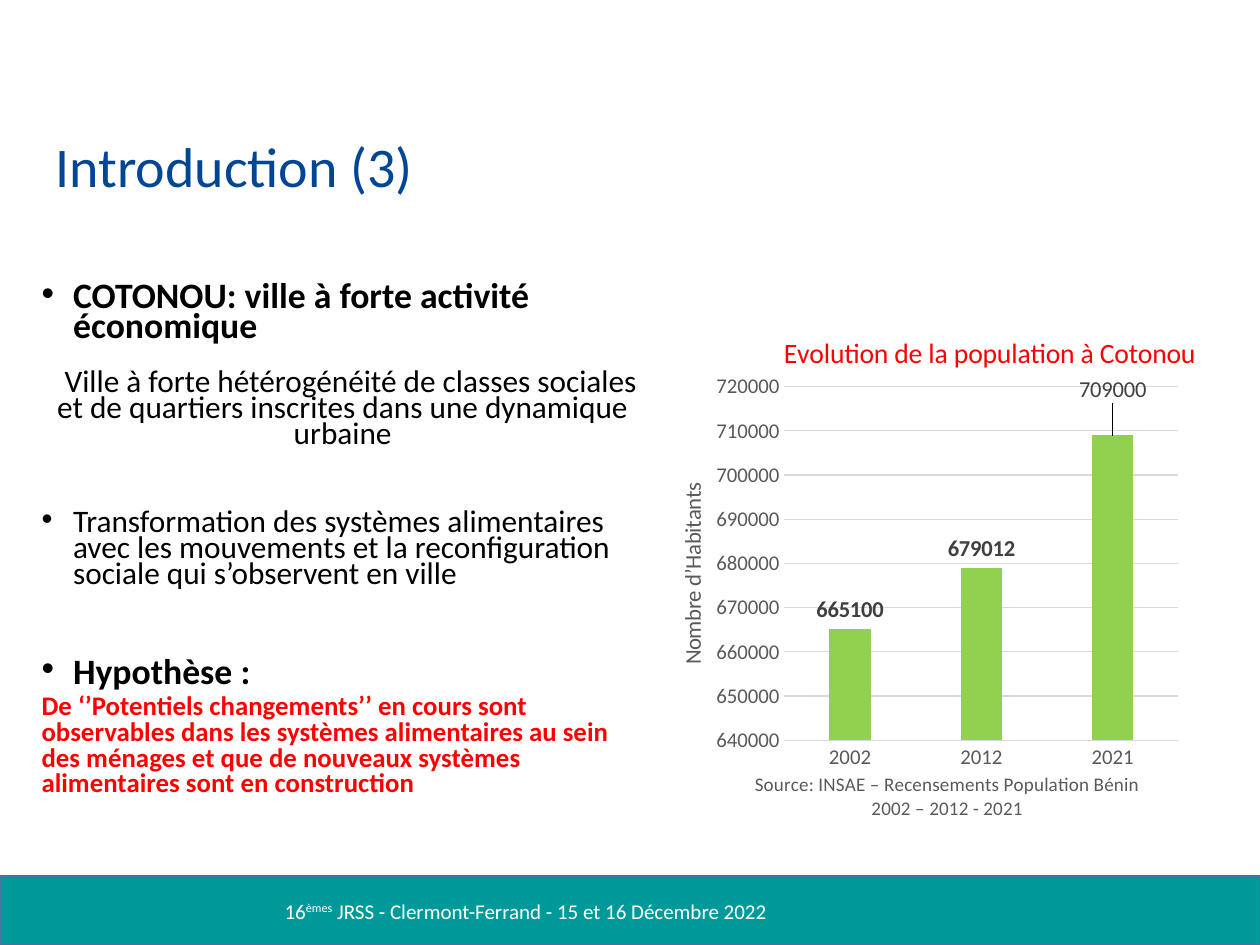
from lxml.etree import SubElement, fromstring
from pptx import Presentation
from pptx.chart.data import CategoryChartData
from pptx.dml.color import RGBColor
from pptx.enum.chart import XL_CHART_TYPE, XL_LABEL_POSITION, XL_TICK_MARK
from pptx.enum.shapes import MSO_SHAPE
from pptx.enum.text import MSO_ANCHOR, MSO_AUTO_SIZE, PP_ALIGN
from pptx.oxml.ns import nsdecls, qn
from pptx.util import Inches, Pt

BLACK, WHITE, RED = "000000", "FFFFFF", "FF0000"
BLUE, TEAL, GREEN = "014694", "00999A", "92D050"
GREY, DARK_GREY, PALE_GREY = "595959", "404040", "D9D9D9"


def colour(code):
    return RGBColor.from_string(code)


def apply(target, values):
    for name, value in values.items():
        setattr(target, name, value)


def set_layout(parent, index, **shares):
    """Place a chart part by shares of the chart's size."""
    old = parent.find(qn("c:layout"))
    if old is not None:
        parent.remove(old)
    layout = fromstring(f"<c:layout {nsdecls('c')}><c:manualLayout/></c:layout>")
    for name, value in shares.items():
        SubElement(layout[0], qn(f"c:{name}")).set("val", str(value))
    parent.insert(index, layout)


class Slide:
    font_name = "Calibri"
    columns, rows = 100, 75

    def __init__(self, deck, layout):
        self.deck = deck
        self.page = deck.slides.add_slide(deck.slide_layouts[layout])

    def place(self, left, top, width, height):
        column = self.deck.slide_width / self.columns
        row = self.deck.slide_height / self.rows
        return [round(value * step) for value, step in
                zip((left, top, width, height), (column, row, column, row))]

    def style(self, font, size, code, bold=False):
        apply(font, dict(name=self.font_name, size=Pt(size), bold=bold))
        font.color.rgb = colour(code)

    def add_span(self, para, text, size, code, bold=False, baseline=0):
        span = para.add_run()
        span.text = text
        self.style(span.font, size, code, bold)
        if baseline:
            span.font._element.set("baseline", str(baseline * 1000))

    def indent(self, para, left=0, first=0, bullet=None):
        props = para._p.get_or_add_pPr()
        props.set("marL", str(Inches(left)))
        props.set("indent", str(Inches(first)))
        if bullet:
            SubElement(props, qn("a:buFont")).set("typeface", "Arial")
            SubElement(props, qn("a:buChar")).set("char", bullet)
        else:
            SubElement(props, qn("a:buNone"))

    def placeholder(self, shape, area, anchor):
        apply(shape, dict(zip(("left", "top", "width", "height"), self.place(*area))))
        apply(shape.text_frame, dict(word_wrap=True, auto_size=MSO_AUTO_SIZE.NONE,
                                     vertical_anchor=anchor))
        return shape.text_frame

    def title(self, text, area):
        shape = self.page.shapes.title
        shape.fill.solid()
        shape.fill.fore_color.rgb = colour(WHITE)
        para = self.placeholder(shape, area, MSO_ANCHOR.MIDDLE).paragraphs[0]
        apply(para, dict(alignment=PP_ALIGN.LEFT, line_spacing=0.9))
        self.add_span(para, text, 32, BLUE)

    def body(self, items, area):
        frame = self.placeholder(self.page.placeholders[1], area, MSO_ANCHOR.TOP)
        for number, (text, look, indent, values) in enumerate(items):
            para = frame.add_paragraph() if number else frame.paragraphs[0]
            self.indent(para, **indent)
            apply(para, dict(alignment=PP_ALIGN.LEFT, line_spacing=0.7,
                             space_before=Pt(0)) | values)
            self.add_span(para, text, **look)

    def bar(self, area, fill, line):
        shape = self.page.shapes.add_shape(MSO_SHAPE.RECTANGLE, *self.place(*area))
        shape.shadow.inherit = False
        shape.fill.solid()
        shape.fill.fore_color.rgb = colour(fill)
        shape.line.color.rgb = colour(line)
        shape.line.width = Pt(1)

    def text(self, spans, area, size, code):
        frame = self.page.shapes.add_textbox(*self.place(*area)).text_frame
        frame.word_wrap = True
        for text, baseline in spans:
            self.add_span(frame.paragraphs[0], text, size, code, baseline=baseline)

    def chart_text(self, title, lines, size, code, x, y):
        frame = title.text_frame
        for number, line in enumerate(lines):
            para = frame.add_paragraph() if number else frame.paragraphs[0]
            self.add_span(para, line, size, code)
        set_layout(title._element, 1, xMode="edge", yMode="edge", x=x, y=y)
        return frame

    def axis(self, axis):
        apply(axis, dict(major_tick_mark=XL_TICK_MARK.NONE,
                         minor_tick_mark=XL_TICK_MARK.NONE))
        self.style(axis.tick_labels.font, 12, GREY)

    def column_chart(self, name, points, area, category_lines, value_line):
        data = CategoryChartData()
        data.categories = list(points)
        data.add_series(name, list(points.values()))
        chart = self.page.shapes.add_chart(
            XL_CHART_TYPE.COLUMN_CLUSTERED, *self.place(*area), data).chart
        self.style(chart.font, 10, BLACK)
        chart.has_legend = False
        self.chart_text(chart.chart_title, [name], 16, RED, 0.25, 0.04)
        set_layout(chart._chartSpace.chart.plotArea, 0, layoutTarget="inner",
                   xMode="edge", yMode="edge", x=0.26, y=0.15, w=0.71, h=0.67)

        # Axes
        years, people = chart.category_axis, chart.value_axis
        self.axis(years)
        self.axis(people)
        years.format.line.color.rgb = colour(PALE_GREY)
        people.format.line.fill.background()
        apply(people, dict(minimum_scale=640000, maximum_scale=720000, major_unit=10000))
        grid = people.major_gridlines.format.line
        grid.color.rgb = colour(PALE_GREY)
        grid.width = years.format.line.width = Pt(0.75)
        self.chart_text(years.axis_title, category_lines, 11, GREY, 0.2, 0.87)
        frame = self.chart_text(people.axis_title, [value_line], 13, GREY, 0.06, 0.32)
        frame._txBody.bodyPr.set("rot", "-5400000")

        # Columns and their labels
        plot = chart.plots[0]
        apply(plot, dict(gap_width=219, overlap=-27, vary_by_categories=False))
        series = plot.series[0]
        series.format.fill.solid()
        series.format.fill.fore_color.rgb = colour(GREEN)
        labels = series.data_labels
        apply(labels, dict(show_value=True, position=XL_LABEL_POSITION.OUTSIDE_END))
        self.style(labels.font, 13, DARK_GREY, bold=True)
        last = series.points[len(points) - 1].data_label
        self.style(last.font, 13, DARK_GREY)
        last.position = XL_LABEL_POSITION.OUTSIDE_END
        set_layout(labels._element.find(qn("c:dLbl")), 1, x=0, y=-0.05)


def main():
    deck = Presentation()
    apply(deck, dict(slide_width=Inches(10), slide_height=Inches(7.5)))
    slide = Slide(deck, layout=1)

    # Footer
    slide.bar((0, 69.5, 100, 5.5), TEAL, "43739E")
    slide.text([("16", 0), ("èmes", 30),
                (" JRSS - Clermont-Ferrand - 15 et 16 Décembre 2022", 0)],
               (21.6, 70.8, 74.8, 3), 12, WHITE)

    # Title and list
    slide.title("Introduction (3)", (3.4, 6.2, 93.2, 14.4))
    bullet = dict(left=0.25, first=-0.25, bullet="•")
    heading = dict(size=20.4, code=BLACK, bold=True)
    plain = dict(size=17.9, code=BLACK)
    slide.body([
        ("COTONOU: ville à forte activité économique", heading, bullet, {}),
        ("Ville à forte hétérogénéité de classes sociales et de quartiers inscrites "
         "dans une dynamique urbaine", plain, dict(first=0.13),
         dict(alignment=PP_ALIGN.CENTER, space_before=Pt(15))),
        ("Transformation des systèmes alimentaires avec les mouvements et la "
         "reconfiguration sociale qui s’observent en ville", plain, bullet,
         dict(space_before=Pt(35))),
        ("Hypothèse :", heading, bullet, dict(space_before=Pt(40))),
        ("De ‘’Potentiels changements’’ en cours sont observables dans les systèmes "
         "alimentaires au sein des ménages et que de nouveaux systèmes alimentaires "
         "sont en construction", dict(size=15.3, code=RED, bold=True), {},
         dict(line_spacing=0.8, space_before=Pt(3))),
    ], (2.3, 22.1, 49.8, 45.9))

    # Population chart
    slide.column_chart(
        "Evolution de la population à Cotonou",
        {"2002": 665100, "2012": 679012, "2021": 709000},
        (50.8, 24.4, 44.5, 41.9),
        ["Source: INSAE – Recensements Population Bénin", "2002 – 2012 - 2021"],
        "Nombre d’Habitants")

    deck.save("out.pptx")


if __name__ == "__main__":
    main()
